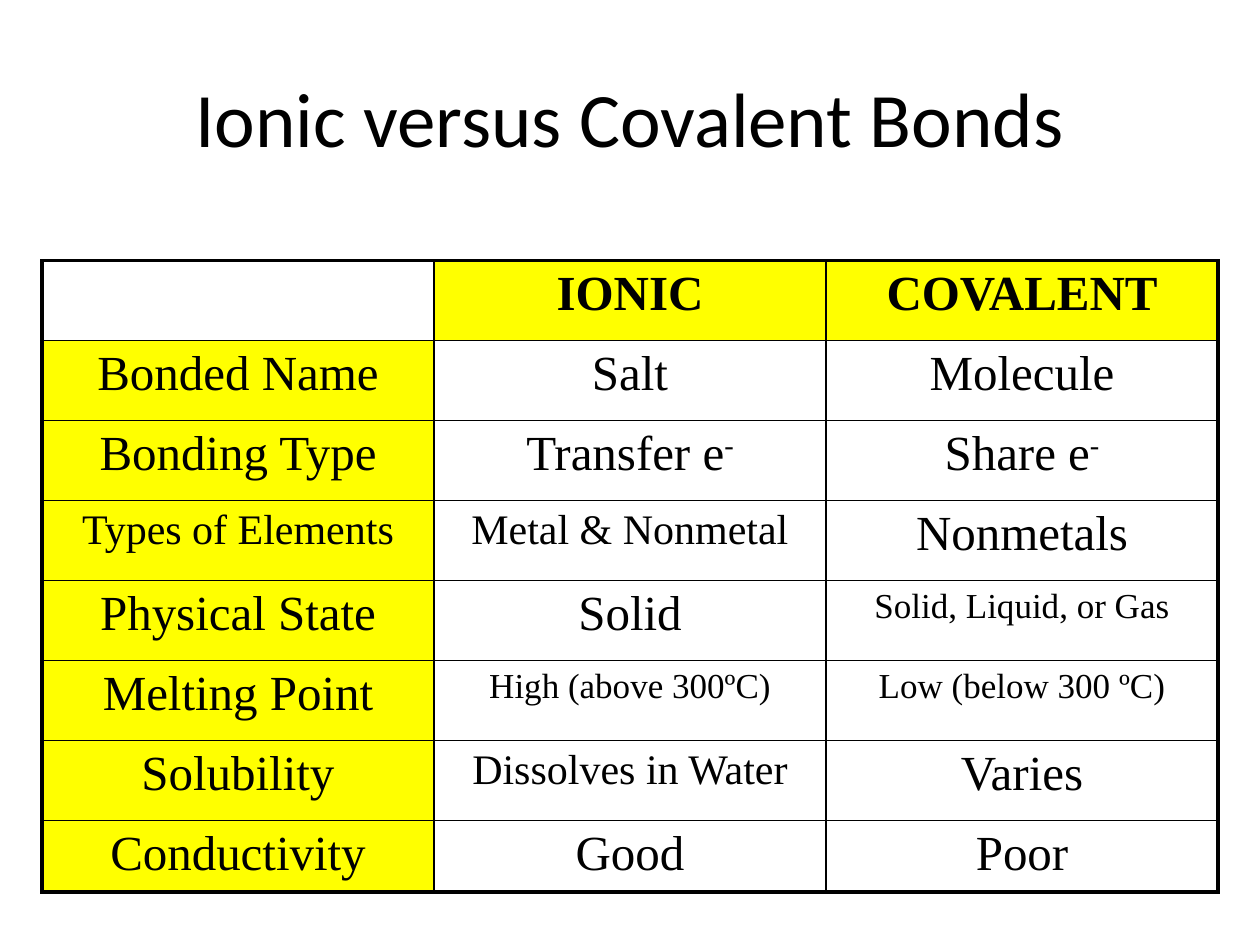
from lxml.etree import SubElement
from pptx import Presentation
from pptx.dml.color import RGBColor
from pptx.enum.text import MSO_ANCHOR as Anchor, PP_ALIGN as Align
from pptx.oxml.ns import qn
from pptx.util import Pt

BLACK, WHITE, YELLOW = "000000", "FFFFFF", "FFFF00"
INNER, OUTER = 1, 2.25
BODY, MEDIUM, SMALL = 28, 24, 20

# Each cell is (text, size, superscript)
ROWS = [
    [("", BODY, ""), ("IONIC", BODY, ""), ("COVALENT", BODY, "")],
    [("Bonded Name", BODY, ""), ("Salt", BODY, ""), ("Molecule", BODY, "")],
    [("Bonding Type", BODY, ""), ("Transfer e", BODY, "-"), ("Share e", BODY, "-")],
    [("Types of Elements", MEDIUM, ""), ("Metal & Nonmetal", MEDIUM, ""), ("Nonmetals", BODY, "")],
    [("Physical State", BODY, ""), ("Solid", BODY, ""), ("Solid, Liquid, or Gas", SMALL, "")],
    [("Melting Point", BODY, ""), ("High (above 300ºC)", SMALL, ""), ("Low (below 300 ºC)", SMALL, "")],
    [("Solubility", BODY, ""), ("Dissolves in Water", MEDIUM, ""), ("Varies", BODY, "")],
    [("Conductivity", BODY, ""), ("Good", BODY, ""), ("Poor", BODY, "")],
]


def color(hex_text):
    return RGBColor.from_string(hex_text)


def style_text(para, size, font, bold=False):
    para.alignment = Align.CENTER
    for span in para.runs:
        span.font.size = Pt(size)
        span.font.name = font
        span.font.bold = bold
        span.font.color.rgb = color(BLACK)


def add_title(page, left, top, width, height):
    box = page.shapes.add_textbox(Pt(left), Pt(top), Pt(width), Pt(height))
    frame = box.text_frame
    frame.word_wrap = True
    frame.vertical_anchor = Anchor.MIDDLE
    frame.text = "Ionic versus Covalent Bonds"
    style_text(frame.paragraphs[0], 44, "Calibri")


def set_borders(cell, widths):
    """Draw black borders; widths are in the order left, right, top, bottom."""
    properties = cell._tc.get_or_add_tcPr()
    for side, width in zip("LRTB", widths):
        line = SubElement(properties, qn(f"a:ln{side}"), w=str(Pt(width)))
        fill = SubElement(line, qn("a:solidFill"))
        SubElement(fill, qn("a:srgbClr"), val=BLACK)


def fill_cell(cell, text, size, superscript, bold):
    para = cell.text_frame.paragraphs[0]
    para.text = text
    if superscript:
        span = para.add_run()
        span.text = superscript
        span._r.get_or_add_rPr().set("baseline", "30000")
    style_text(para, size, "Times New Roman", bold)


def add_comparison(page, left, top, width, height):
    last_row, last_column = len(ROWS) - 1, len(ROWS[0]) - 1
    row_height = 45.72
    frame = page.shapes.add_table(len(ROWS), len(ROWS[0]),
                                  Pt(left), Pt(top), Pt(width), Pt(height))
    table = frame.table
    table.first_row = table.horz_banding = False
    for column in table.columns:
        column.width = Pt(width / len(ROWS[0]))
    for row in table.rows:
        row.height = Pt(row_height)
    table.rows[last_row].height = Pt(height - row_height * last_row)

    for r, cells in enumerate(ROWS):
        for c, (text, size, superscript) in enumerate(cells):
            cell = table.cell(r, c)
            at_edge = (c == 0, c == last_column, r == 0, r == last_row)
            set_borders(cell, [OUTER if edge else INNER for edge in at_edge])
            is_heading = (r == 0) != (c == 0)
            cell.fill.solid()
            cell.fill.fore_color.rgb = color(YELLOW if is_heading else WHITE)
            fill_cell(cell, text, size, superscript, bold=r == 0)


def main():
    deck = Presentation()
    deck.slide_width, deck.slide_height = Pt(720), Pt(540)
    page = deck.slides.add_slide(deck.slide_layouts[6])
    add_title(page, 36, 21.6, 648, 90)
    add_comparison(page, 24, 149, 672, 361)
    deck.save("out.pptx")


if __name__ == "__main__":
    main()
